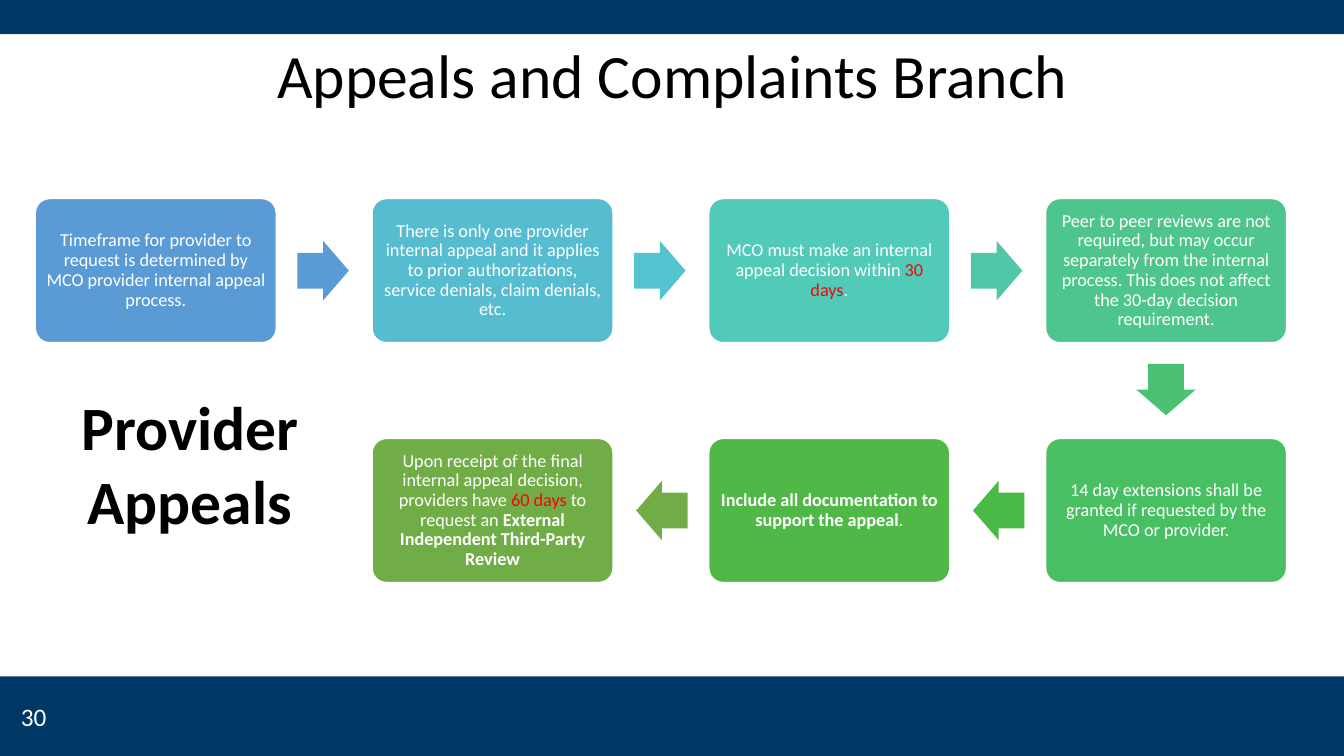
"""Build the provider appeals process slide."""
from dataclasses import dataclass
from itertools import pairwise

from pptx import Presentation
from pptx.dml.color import RGBColor
from pptx.enum.shapes import MSO_SHAPE
from pptx.enum.text import MSO_ANCHOR, MSO_AUTO_SIZE, PP_ALIGN
from pptx.util import Inches, Pt

RECTANGLE = MSO_SHAPE.RECTANGLE
ROUNDED = MSO_SHAPE.ROUNDED_RECTANGLE
ARROW = MSO_SHAPE.RIGHT_ARROW
TOP, MIDDLE = MSO_ANCHOR.TOP, MSO_ANCHOR.MIDDLE
NO_FIT, GROW = MSO_AUTO_SIZE.NONE, MSO_AUTO_SIZE.SHAPE_TO_FIT_TEXT
LEFT, CENTER = PP_ALIGN.LEFT, PP_ALIGN.CENTER

FONT = "Calibri"
NAVY, WHITE, BLACK, RED = "003865", "FFFFFF", "000000", "FF0000"
SLIDE_WIDTH, SLIDE_HEIGHT = 13.33, 7.5
GRID_LEFT, GRID_TOP = 0.35, 1.97
COLUMN_PITCH, ROW_PITCH = 3.34, 2.38
BOX_WIDTH, BOX_HEIGHT, BOX_INSET = 2.39, 1.43, 0.05
ARROW_LENGTH, ARROW_BREADTH, ARROW_SETBACK = 0.51, 0.59, 0.01


@dataclass(frozen=True)
class Span:
    """A run of text with one look."""
    text: str
    color: str = WHITE
    bold: bool = False


@dataclass(frozen=True)
class Step:
    """A box of the process and the colour of the arrow that leaves it."""
    column: int
    row: int
    fill: str
    spans: tuple[Span, ...]
    arrow_fill: str = ""

    @property
    def left(self) -> float:
        """Return the left edge in inches."""
        return GRID_LEFT + self.column * COLUMN_PITCH

    @property
    def top(self) -> float:
        """Return the top edge in inches."""
        return GRID_TOP + self.row * ROW_PITCH


STEPS = (
    Step(0, 0, "5B9BD5", (Span("Timeframe for provider to request is determined by "
                               "MCO provider internal appeal process."),), "5B9BD5"),
    Step(1, 0, "56BCD0", (Span("There is only one provider internal appeal and it applies to prior "
                               "authorizations, service denials, claim denials, etc."),), "55C3CF"),
    Step(2, 0, "52CAB8", (Span("MCO must make an internal appeal decision within "),
                          Span("30 days", RED), Span(".")), "50C8A7"),
    Step(3, 0, "4DC58D", (Span("Peer to peer reviews are not required, but may occur separately from the "
                               "internal process. This does not affect the 30-day decision "
                               "requirement."),), "4BC174"),
    Step(3, 1, "49BF64", (Span("14 day extensions shall be granted if requested by the "
                               "MCO or provider."),), "4ABA46"),
    Step(2, 1, "50B846", (Span("Include all documentation to support the appeal", bold=True),
                          Span(".")), "70AD47"),
    Step(1, 1, "70AD47", (Span("Upon receipt of the final internal appeal decision, providers have "),
                          Span("60 days", RED), Span(" to request an "),
                          Span("External Independent Third-Party Review", bold=True))),
)


def rgb(value: str) -> RGBColor:
    """Turn a hex string into a colour."""
    return RGBColor.from_string(value)


def write(shape, spans: tuple[Span, ...], size: float, align=CENTER, spacing: float = 1.0) -> None:
    """Fill the first paragraph of a shape with formatted spans."""
    shape.text_frame.word_wrap = True
    para = shape.text_frame.paragraphs[0]
    para.alignment = align
    para.line_spacing = spacing
    for span in spans:
        run = para.add_run()
        run.text = span.text
        run.font.name = FONT
        run.font.size = Pt(size)
        run.font.bold = span.bold
        run.font.color.rgb = rgb(span.color)


def add_block(page, kind, left: float, top: float, width: float, height: float, fill: str):
    """Add a flat filled shape without outline or shadow."""
    block = page.shapes.add_shape(kind, Inches(left), Inches(top), Inches(width), Inches(height))
    block.shadow.inherit = False
    block.fill.solid()
    block.fill.fore_color.rgb = rgb(fill)
    block.line.fill.background()
    return block


def add_step(page, step: Step) -> None:
    """Draw one box of the process."""
    box = add_block(page, ROUNDED, step.left, step.top, BOX_WIDTH, BOX_HEIGHT, step.fill)
    box.adjustments[0] = 0.1
    box.line.color.rgb = rgb(WHITE)
    box.line.width = Pt(1)
    frame = box.text_frame
    frame.margin_left = frame.margin_right = Inches(BOX_INSET)
    frame.margin_top = frame.margin_bottom = Inches(BOX_INSET)
    frame.vertical_anchor = MIDDLE
    write(box, step.spans, 13, spacing=0.9)


def add_arrow(page, start: Step, end: Step) -> None:
    """Draw the arrow halfway between two boxes, set back towards the first."""
    across, down = end.column - start.column, end.row - start.row
    center_x = (start.left + end.left + BOX_WIDTH) / 2 - across * ARROW_SETBACK
    center_y = (start.top + end.top + BOX_HEIGHT) / 2 - down * ARROW_SETBACK
    arrow = add_block(page, ARROW, center_x - ARROW_LENGTH / 2, center_y - ARROW_BREADTH / 2,
                      ARROW_LENGTH, ARROW_BREADTH, start.arrow_fill)
    arrow.adjustments[0], arrow.adjustments[1] = 0.6, 0.5
    arrow.rotation = 90 if down else 90 * (1 - across)


def add_label(page, left: float, top: float, width: float, height: float, span: Span,
              size: float, align):
    """Add a text box holding one span."""
    label = page.shapes.add_textbox(Inches(left), Inches(top), Inches(width), Inches(height))
    write(label, (span,), size, align)
    return label


def add_title(page, text: str) -> None:
    """Place and format the title placeholder."""
    title = page.shapes.title
    title.left, title.top = Inches(0.92), Inches(0.4)
    title.width, title.height = Inches(11.5), Inches(1.45)
    title.text_frame.vertical_anchor = TOP
    title.text_frame.auto_size = NO_FIT
    write(title, (Span(text, BLACK),), 44, spacing=0.9)


def main() -> None:
    """Build and save the deck."""
    deck = Presentation()
    deck.slide_width, deck.slide_height = Inches(SLIDE_WIDTH), Inches(SLIDE_HEIGHT)
    page = deck.slides.add_slide(deck.slide_layouts[5])
    for top, height in ((0, 0.34), (6.71, 0.79)):
        add_block(page, RECTANGLE, 0, top, SLIDE_WIDTH, height, NAVY)
    add_title(page, "Appeals and Complaints Branch")
    for step in STEPS:
        add_step(page, step)
    for start, end in pairwise(STEPS):
        add_arrow(page, start, end)
    heading = add_label(page, -0.1, 3.81, 3.97, 1.58, Span("Provider Appeals", BLACK, True), 44, CENTER)
    heading.text_frame.auto_size = GROW
    add_label(page, 0.11, 6.91, 2.33, 0.4, Span("30"), 18, LEFT)
    deck.save("out.pptx")


if __name__ == "__main__":
    main()
